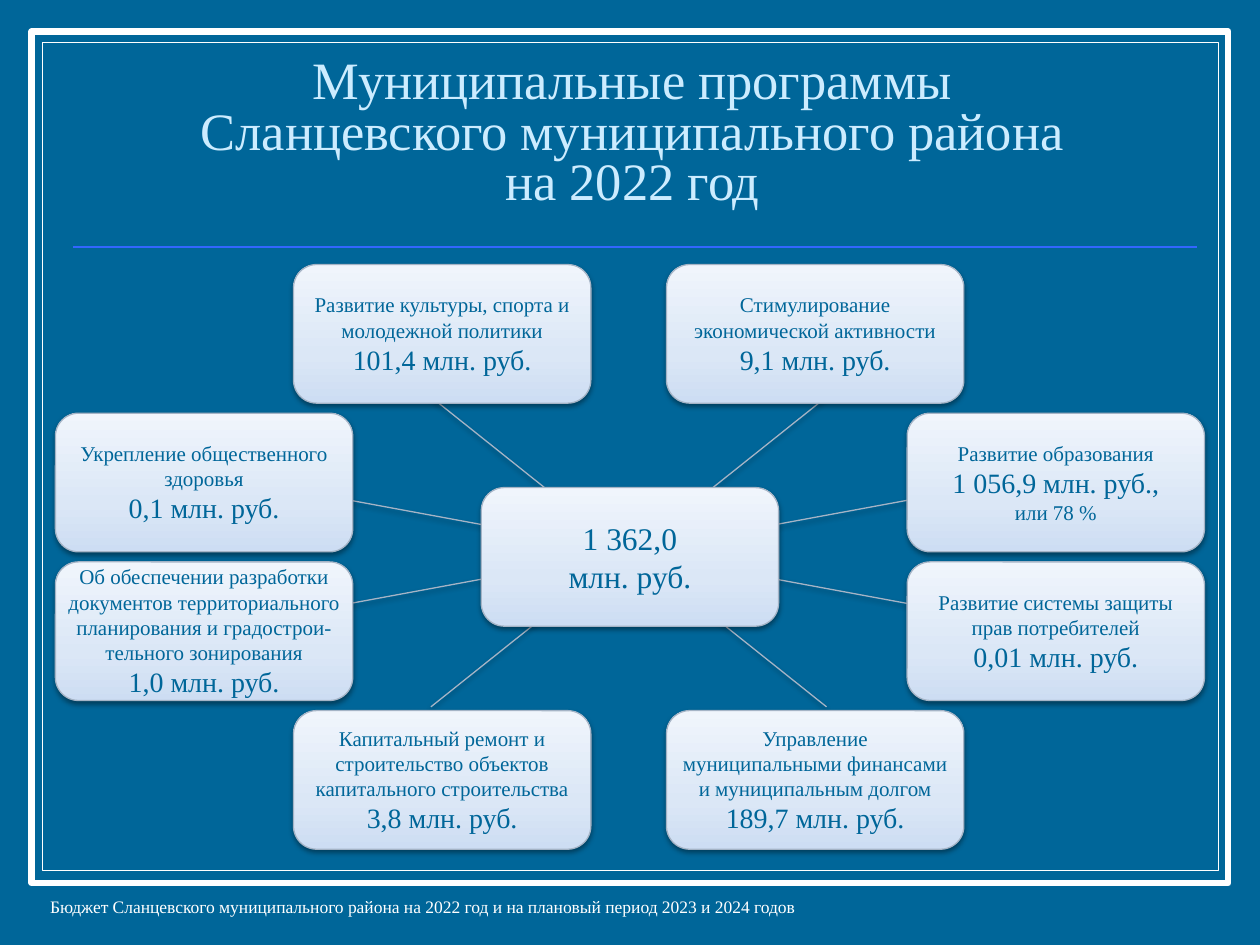
"""Build the slide of municipal programmes around their total budget."""
from copy import deepcopy
from itertools import product

from pptx import Presentation
from pptx.dml.color import RGBColor
from pptx.enum.shapes import MSO_CONNECTOR, MSO_SHAPE
from pptx.enum.text import MSO_ANCHOR, PP_ALIGN
from pptx.oxml import parse_xml
from pptx.oxml.ns import nsdecls
from pptx.util import Inches, Pt


def rgb(value):
    return RGBColor.from_string(value)


def write(sp, lines, color, align, anchor, margin=None, spacing=None):
    tf = sp.text_frame
    fmt = {"word_wrap": True, "vertical_anchor": anchor}
    if margin is not None:
        for side in ("left", "right", "top", "bottom"):
            fmt["margin_" + side] = margin
    for name, value in fmt.items():
        setattr(tf, name, value)
    for i, (text, size) in enumerate(lines):
        p = tf.add_paragraph() if i else tf.paragraphs[0]
        p.text = text
        for name, value in {"alignment": align, "line_spacing": spacing}.items():
            setattr(p, name, value)
        for r in p.runs:
            for name, value in {"name": "Times New Roman", "size": Pt(size)}.items():
                setattr(r.font, name, value)
            r.font.color.rgb = rgb(color)


SHADOW = parse_xml(
    f'<a:effectLst {nsdecls("a")}><a:outerShdw blurRad="39370" dist="20320" dir="5400000" '
    'rotWithShape="0"><a:srgbClr val="000000"><a:alpha val="38000"/></a:srgbClr>'
    '</a:outerShdw></a:effectLst>')
STOPS = [(0, "CDDDF3"), (0.35, "DBE7F6"), (1, "F0F5FC")]
BOX_W, BOX_H = 2.36, 1.1
TOP, ROW_STEP = 2.1, 1.18
CENTER_X, CENTER_Y = 4.99, 4.38

prs = Presentation()
prs.slide_width, prs.slide_height = Inches(10), Inches(7.5)
s = prs.slides.add_slide(prs.slide_layouts[6])
s.background.fill.solid()
s.background.fill.fore_color.rgb = rgb("006699")

for x, y, w, h, weight in [(0.25, 0.25, 9.5, 6.76, 3.5), (0.34, 0.34, 9.33, 6.57, 0.75)]:
    sp = s.shapes.add_shape(MSO_SHAPE.RECTANGLE, Inches(x), Inches(y), Inches(w), Inches(h))
    sp.shadow.inherit = False
    sp.fill.solid()
    sp.fill.fore_color.rgb = rgb("006699")
    sp.line.color.rgb = rgb("FFFFFF")
    sp.line.width = Pt(weight)

rule = s.shapes.add_connector(MSO_CONNECTOR.STRAIGHT, Inches(0.58), Inches(1.96),
                              Inches(9.5), Inches(1.96))
rule.line.color.rgb = rgb("3366FF")
rule.line.width = Pt(1)
rule._element.spPr.append(parse_xml(f'<a:effectLst {nsdecls("a")}/>'))

footer = s.shapes.add_textbox(Inches(0.3), Inches(6.83), Inches(9.39), Inches(0.5))
write(footer, [("Бюджет Сланцевского муниципального района на 2022 год "
                "и на плановый период 2023 и 2024 годов", 10)],
      "FFFFFF", PP_ALIGN.LEFT, MSO_ANCHOR.BOTTOM)

title = s.shapes.add_textbox(Inches(0.56), Inches(0.69), Inches(8.92), Inches(1.03))
write(title, [("Муниципальные программы\vСланцевского муниципального района\vна 2022 год", 30)],
      "CCECFF", PP_ALIGN.CENTER, MSO_ANCHOR.BOTTOM, spacing=0.8)

spokes = [(0.53, 0.4, 1.57, 1.23), (0.86, 0.16, 2.54, 0.47)]
for (x1, y1, x2, y2), dx, dy in product(spokes, (-1, 1), (-1, 1)):
    spoke = s.shapes.add_connector(
        MSO_CONNECTOR.STRAIGHT,
        Inches(CENTER_X + dx * x1), Inches(CENTER_Y + dy * y1),
        Inches(CENTER_X + dx * x2), Inches(CENTER_Y + dy * y2))
    spoke.line.color.rgb = rgb("A5B4C6")
    spoke.line.width = Pt(0.75)
    spoke._element.spPr.append(deepcopy(SHADOW))

boxes = [
    (2.33, 0, [("Развитие культуры, спорта и молодежной политики", 12), ("101,4 млн. руб.", 16)]),
    (3.82, 1.5, [("1 362,0", 18), ("млн. руб.", 18)]),
    (0.44, 1, [("Укрепление общественного здоровья", 12), ("0,1 млн. руб.", 16)]),
    (0.44, 2, [("Об обеспечении разработки документов территориального планирования "
                "и градострои-тельного зонирования", 12), ("1,0 млн. руб.", 16)]),
    (2.33, 3, [("Капитальный ремонт и", 12), ("строительство объектов", 12),
               ("капитального строительства", 12), ("3,8 млн. руб.", 16)]),
    (5.29, 3, [("Управление", 12), ("муниципальными финансами", 12),
               ("и муниципальным долгом", 12), ("189,7 млн. руб.", 16)]),
    (7.2, 2, [("Развитие системы защиты", 12), ("прав потребителей", 12),
              ("0,01 млн. руб.", 16)]),
    (7.2, 1, [("Развитие образования", 12), ("1 056,9 млн. руб.,", 16), ("или 78 %", 12)]),
    (5.29, 0, [("Стимулирование экономической активности", 12), ("9,1 млн. руб.", 16)]),
]
for x, row, lines in boxes:
    sp = s.shapes.add_shape(MSO_SHAPE.ROUNDED_RECTANGLE, Inches(x),
                            Inches(TOP + row * ROW_STEP), Inches(BOX_W), Inches(BOX_H))
    sp.fill.gradient()
    sp.fill.gradient_angle = 90
    gs_list = sp._element.spPr.find(".//{*}gsLst")
    gs_list.insert(1, deepcopy(gs_list[0]))
    for stop, (position, color) in zip(sp.fill.gradient_stops, STOPS):
        stop.position = position
        stop.color.rgb = rgb(color)
    sp.line.color.rgb = rgb("A5B4C6")
    sp.line.width = Pt(0.75)
    sp._element.spPr.append(deepcopy(SHADOW))
    write(sp, lines, "006699", PP_ALIGN.CENTER, MSO_ANCHOR.MIDDLE, margin=0)

prs.save("out.pptx")
